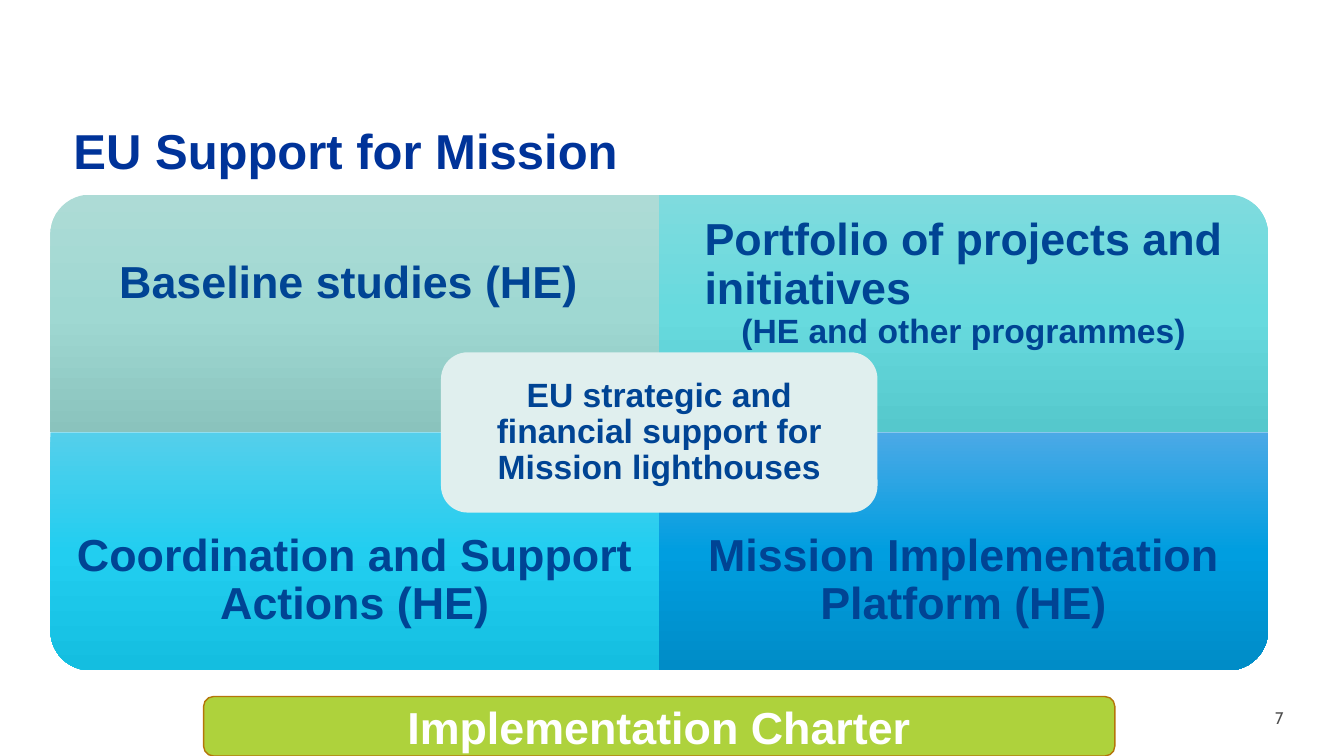
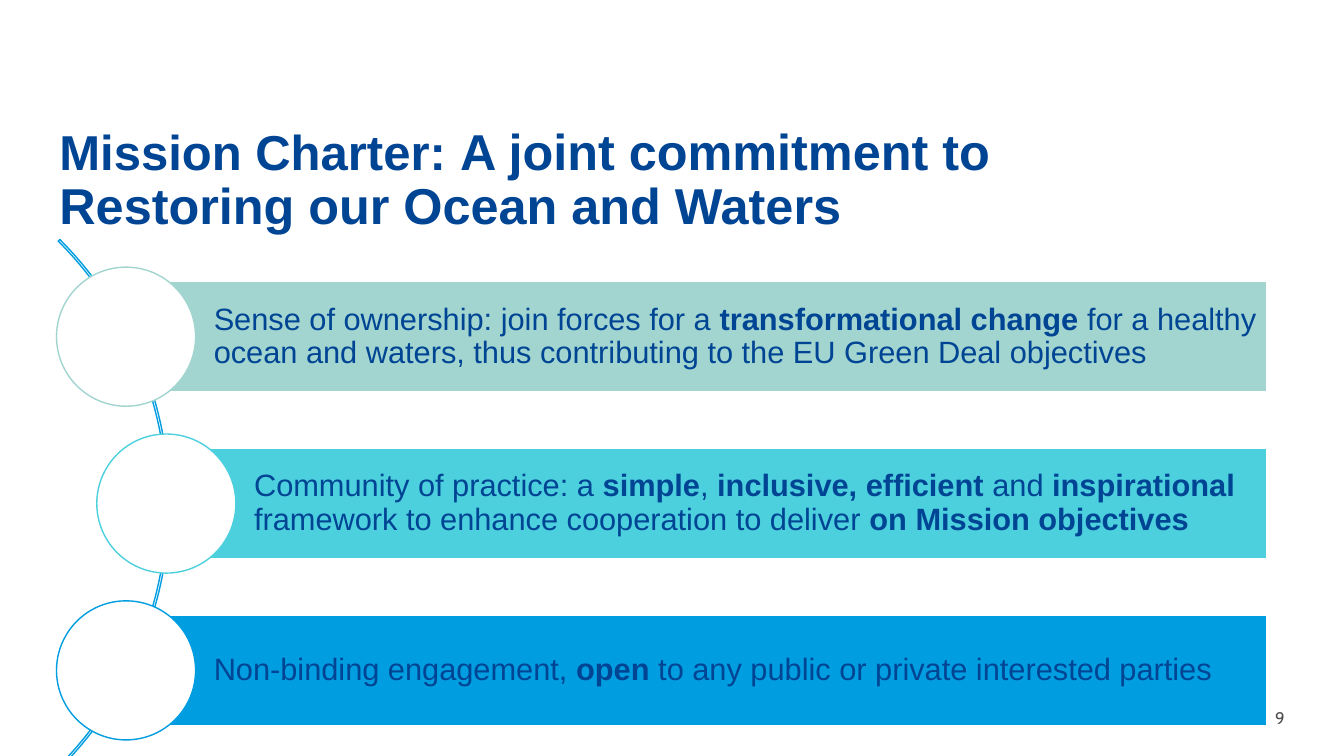
from lxml import etree
from pptx import Presentation, util as u
from pptx.dml.color import RGBColor
from pptx.enum import shapes, text
from pptx.oxml import ns

COLORS = {
    "navy": "004494", "royal": "003399", "grey": "4D4D4D", "white": "FFFFFF",
    "mist": "E0EFEE", "lime": "AED23C", "amber": "B47509",
    "sage": "A2D5D0", "aqua": "4DD0DE", "azure": "009EE0",
}
GRADIENTS = {
    "baseline": ("ADDBD6", "9FD8D2", "8AC3BD"),
    "portfolio": ("7FDBDE", "67DADE", "55C8CC"),
    "coordination": ("54CFEB", "22CEF0", "14BEE0"),
    "platform": ("4BA9E6", "009EE0", "008CC7"),
}
LEFT, CENTER = text.PP_ALIGN.LEFT, text.PP_ALIGN.CENTER
KIND = shapes.MSO_SHAPE

deck = Presentation()
deck.slide_width, deck.slide_height = u.Inches(13.33), u.Inches(7.5)
COL, ROW = deck.slide_width / 100, deck.slide_height / 100


def block(slide, kind, x, y, w, h, fill=None, line=None):
    area = [int(v) for v in (x * COL, y * ROW, w * COL, h * ROW)]
    if kind is None:
        return slide.shapes.add_textbox(*area)
    shape = slide.shapes.add_shape(kind, *area)
    shape.shadow.inherit = False
    if fill:
        shape.fill.solid()
        shape.fill.fore_color.rgb = RGBColor.from_string(COLORS[fill])
    else:
        shape.fill.background()
    if line:
        shape.line.color.rgb = RGBColor.from_string(COLORS[line])
        shape.line.width = u.Pt(1)
    else:
        shape.line.fill.background()
    return shape


def write(shape, lines, color="navy", bold=True, align=CENTER, spacing=0.9,
          insets=(0.1, 0.05, 0.1, 0.05), middle=True, font="Arial"):
    frame = shape.text_frame
    frame.word_wrap = True
    frame.vertical_anchor = text.MSO_ANCHOR.MIDDLE if middle else text.MSO_ANCHOR.TOP
    frame.margin_left, frame.margin_top, frame.margin_right, frame.margin_bottom = map(u.Inches, insets)
    for row, (words, size) in enumerate(lines):
        paragraph = frame.add_paragraph() if row else frame.paragraphs[0]
        paragraph.alignment = align
        paragraph.line_spacing = spacing
        for part, piece in enumerate(words.split("*")):
            run = paragraph.add_run()
            run.text = piece
            run.font.name, run.font.size = font, u.Pt(size)
            run.font.bold = bold or part % 2 == 1
            run.font.color.rgb = RGBColor.from_string(COLORS[color])
    return frame


pages = [
    ("7", "EU Support for Mission", "royal", 4.73),
    ("9", "Mission Charter: *A joint commitment to Restoring our Ocean and Waters", "navy", 3.68),
]
slides, titles = [], []
for number, heading, color, x in pages:
    slide = deck.slides.add_slide(deck.slide_layouts[6])
    write(block(slide, None, 94.15, 92.93, 5.5, 5.33), [(number, 12)], "grey",
          bold=False, align=LEFT, spacing=1, middle=False, font="Cabin")
    titles.append(write(block(slide, None, x, 16.13, 86.78, 19.33), [(heading, 35)], color,
                        align=LEFT, middle=False))
    slides.append(slide)
support, charter = slides
titles[1].paragraphs[0].runs[1].font.size = u.Pt(36)

GRID_X, GRID_Y, TILE_W, TILE_H = 3.75, 25.73, 45.3, 31.47
LABEL_H = TILE_H * 0.75
quadrants = [
    ("baseline", 0, 0, 270, [("Baseline studies (HE) ", 32)]),
    ("portfolio", 1, 0, 0, [("Portfolio of projects and initiatives", 32),
                            ("(HE and other programmes)", 24)]),
    ("coordination", 0, 1, 180, [("Coordination and Support Actions (HE)", 32)]),
    ("platform", 1, 1, 90, [("Mission Implementation Platform (HE)", 32)]),
]
for theme, column, row, turn, lines in quadrants:
    x, y = GRID_X + column * TILE_W, GRID_Y + row * TILE_H
    tile = block(support, KIND.ROUND_1_RECTANGLE, x, y, TILE_W, TILE_H)
    if turn % 180:
        shift = (tile.width - tile.height) // 2
        tile.left, tile.top = tile.left + shift, tile.top - shift
        tile.width, tile.height = tile.height, tile.width
    tile.rotation = turn
    gradient = etree.Element(ns.qn("a:gradFill"), rotWithShape="0")
    stops = etree.SubElement(gradient, ns.qn("a:gsLst"))
    for position, shade in zip((0, 50000, 100000), GRADIENTS[theme]):
        stop = etree.SubElement(stops, ns.qn("a:gs"), pos=str(position))
        etree.SubElement(stop, ns.qn("a:srgbClr"), val=shade)
    etree.SubElement(gradient, ns.qn("a:lin"), ang="5400000", scaled="0")
    properties = tile.element.spPr
    properties.replace(properties.find(ns.qn("a:noFill")), gradient)
    label = write(block(support, None, x, y + row * (TILE_H - LABEL_H), TILE_W, LABEL_H),
                  lines, insets=[0.25] * 4)
    if len(lines) > 1:
        opening = label.paragraphs[0]
        opening.alignment = LEFT
        opening._p.get_or_add_pPr().set("marL", str(u.Inches(0.2)))

CENTER_X, CENTER_Y = GRID_X + TILE_W, GRID_Y + TILE_H
CARD_W, CARD_H, BANNER_W = 32.48, 21.2, 67.8
lighthouses = block(support, KIND.ROUNDED_RECTANGLE, CENTER_X - CARD_W / 2, CENTER_Y - CARD_H / 2,
                    CARD_W, CARD_H, "mist")
write(lighthouses, [("EU strategic and financial support for Mission lighthouses", 24)], insets=[0.18] * 4)
banner = block(support, KIND.ROUNDED_RECTANGLE, CENTER_X - BANNER_W / 2, 92.13, BANNER_W, 7.87,
               "lime", "amber")
write(banner, [("Implementation Charter", 32)], "white", spacing=1)

arc = block(charter, KIND.BLOCK_ARC, -43.05, 17.2, 55.65, 98.93, line="azure")
for index, value in enumerate((189, 27, 0.003)):
    arc.adjustments[index] = value

BAR_Y, BAR_STEP, BAR_H, BAR_RIGHT = 37.2, 22.07, 14.67, 94.28
DOT_W, DOT_H = 10.35, 18.4
commitments = [
    ("sage", 9.38, "Sense of ownership: join forces for a *transformational change *for a healthy "
                   "ocean and waters, thus contributing to the EU Green Deal objectives"),
    ("aqua", 12.38, "Community of practice: a *simple*, *inclusive, efficient* and *inspirational *"
                    "framework to enhance cooperation to deliver *on Mission objectives"),
    ("azure", 9.38, "Non-binding engagement, *open* to any public or private interested parties"),
]
for row, (color, x, words) in enumerate(commitments):
    y = BAR_Y + row * BAR_STEP
    bar = block(charter, KIND.RECTANGLE, x, y, BAR_RIGHT - x, BAR_H, color, "white")
    write(bar, [(words, 22)], bold=False, align=LEFT, insets=(0.87, 0.06, 0.06, 0.06))
    block(charter, KIND.OVAL, x - DOT_W / 2, y + (BAR_H - DOT_H) / 2, DOT_W, DOT_H, "white", color)

deck.save("out.pptx")
